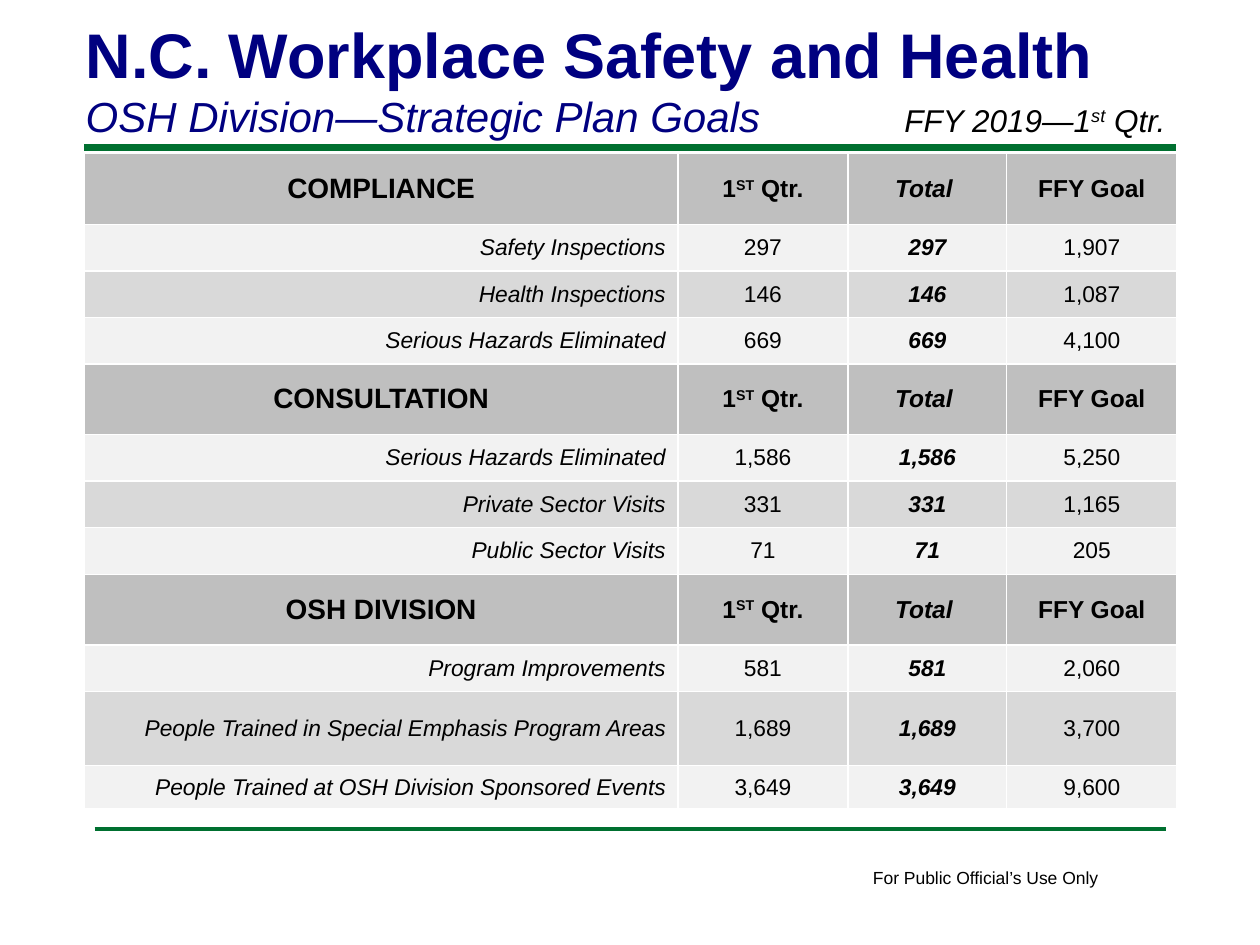
"""Build the strategic plan goals slide with its quarterly results table."""
from lxml.etree import SubElement
from pptx import Presentation
from pptx.dml.color import RGBColor
from pptx.enum.shapes import MSO_CONNECTOR
from pptx.enum.text import MSO_ANCHOR, MSO_AUTO_SIZE, PP_ALIGN
from pptx.oxml.ns import qn
from pptx.util import Inches, Pt

NAVY = RGBColor(0x00, 0x00, 0x80)
GREEN = RGBColor(0x00, 0x70, 0x30)
BLACK = RGBColor(0x00, 0x00, 0x00)
WHITE = RGBColor(0xFF, 0xFF, 0xFF)
HEADER_GRAY = RGBColor(0xBF, 0xBF, 0xBF)
LIGHT_GRAY = RGBColor(0xF2, 0xF2, 0xF2)
MID_GRAY = RGBColor(0xD9, 0xD9, 0xD9)

SECTIONS = [
    ("COMPLIANCE", [
        ("Safety Inspections", "297", "1,907", 0.37),
        ("Health Inspections", "146", "1,087", 0.37),
        ("Serious Hazards Eliminated", "669", "4,100", 0.37),
    ]),
    ("CONSULTATION", [
        ("Serious Hazards Eliminated", "1,586", "5,250", 0.37),
        ("Private Sector Visits", "331", "1,165", 0.37),
        ("Public Sector Visits", "71", "205", 0.37),
    ]),
    ("OSH DIVISION", [
        ("Program Improvements", "581", "2,060", 0.37),
        ("People Trained in Special Emphasis Program Areas", "1,689", "3,700", 0.59),
        ("People Trained at OSH Division Sponsored Events", "3,649", "9,600", 0.34),
    ]),
]
COLUMN_WIDTHS = [4.71, 1.35, 1.26, 1.35]


def add_span(para, text, size, color=BLACK, bold=False, italic=False, raised=False):
    span = para.add_run()
    span.text = text
    span.font.name = "Arial"
    span.font.size = Pt(size)
    span.font.bold = bold
    span.font.italic = italic
    span.font.color.rgb = color
    if raised:
        span.font._element.set("baseline", "30000")


def style_cell(cell, fill, align):
    properties = cell._tc.get_or_add_tcPr()
    for side in ("a:lnL", "a:lnR", "a:lnT", "a:lnB"):
        border = SubElement(properties, qn(side), w=str(Pt(1)))
        solid = SubElement(border, qn("a:solidFill"))
        SubElement(solid, qn("a:srgbClr"), val=str(WHITE))
    cell.fill.solid()
    cell.fill.fore_color.rgb = fill
    cell.vertical_anchor = MSO_ANCHOR.MIDDLE
    para = cell.text_frame.paragraphs[0]
    para.alignment = align
    return para


deck = Presentation()
deck.slide_width = Inches(10)
deck.slide_height = Inches(7.5)
page = deck.slides.add_slide(deck.slide_layouts[5])

for left, right, top, weight in [(0.67, 9.33, 1.17, 4), (0.75, 9.25, 6.58, 2)]:
    rule = page.shapes.add_connector(
        MSO_CONNECTOR.STRAIGHT, Inches(left), Inches(top), Inches(right), Inches(top))
    rule.line.color.rgb = GREEN
    rule.line.width = Pt(weight)
    SubElement(rule._element.spPr, qn("a:effectLst"))

footer = page.shapes.add_textbox(Inches(6.83), Inches(6.83), Inches(2.01), Inches(0.27))
footer.text_frame.word_wrap = False
add_span(footer.text_frame.paragraphs[0], "For Public Official’s Use Only", 10)

title = page.shapes.title
title.left, title.top = Inches(0.58), Inches(0.06)
title.width, title.height = Inches(8.25), Inches(1.11)
frame = title.text_frame
frame.auto_size = MSO_AUTO_SIZE.NONE
frame.vertical_anchor = MSO_ANCHOR.BOTTOM
heading, subheading = frame.paragraphs[0], frame.add_paragraph()
heading.alignment = subheading.alignment = PP_ALIGN.LEFT
add_span(heading, "N.C. Workplace Safety and Health", 36, NAVY, bold=True)
add_span(subheading, "OSH Division—Strategic Plan Goals", 24, NAVY, italic=True)

period = page.shapes.add_textbox(Inches(7.08), Inches(0.75), Inches(2.5), Inches(0.4))
period.text_frame.word_wrap = True
para = period.text_frame.paragraphs[0]
for text in ("FFY 2019—1", "st", " Qtr."):
    add_span(para, text, 18, italic=True, raised=text == "st")

row_count = sum(1 + len(goals) for heading, goals in SECTIONS)
table = page.shapes.add_table(
    row_count, len(COLUMN_WIDTHS),
    Inches(0.67), Inches(1.22), Inches(8.67), Inches(5.19)).table
for column, width in zip(table.columns, COLUMN_WIDTHS):
    column.width = Inches(width)

rows = iter(table.rows)
for section, goals in SECTIONS:
    row = next(rows)
    row.height = Inches(0.56)
    name, quarter, total, goal = [
        style_cell(cell, HEADER_GRAY, PP_ALIGN.CENTER) for cell in row.cells]
    add_span(name, section, 16, bold=True)
    for text in ("1", "ST", " Qtr."):
        add_span(quarter, text, 14, bold=True, raised=text == "ST")
    add_span(total, "Total ", 14, bold=True, italic=True)
    add_span(goal, "FFY Goal", 14, bold=True)

    for index, (label, result, target, height) in enumerate(goals):
        row = next(rows)
        row.height = Inches(height)
        fill = MID_GRAY if index % 2 else LIGHT_GRAY
        for column, (cell, text) in enumerate(zip(row.cells, (label, result, result, target))):
            para = style_cell(cell, fill, PP_ALIGN.CENTER if column else PP_ALIGN.RIGHT)
            add_span(para, text, 13, bold=column == 2, italic=column in (0, 2))

deck.save("out.pptx")
